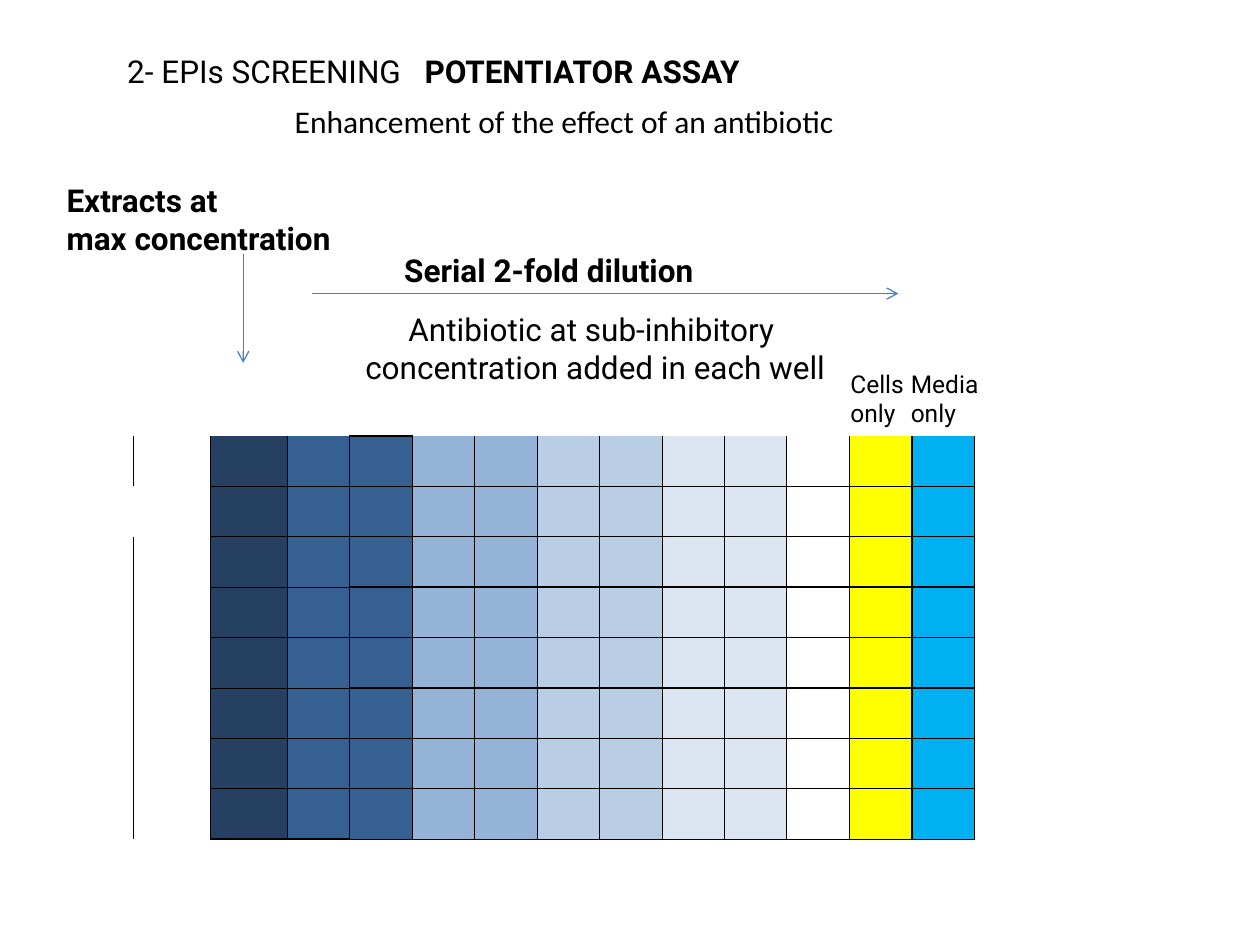
from lxml import etree
from pptx import Presentation
from pptx.dml.color import RGBColor
from pptx.enum.shapes import MSO_CONNECTOR
from pptx.enum.text import MSO_ANCHOR, MSO_AUTO_SIZE, PP_ALIGN
from pptx.oxml.ns import qn
from pptx.util import Inches, Pt

STRAIGHT = MSO_CONNECTOR.STRAIGHT
TOP = MSO_ANCHOR.TOP
GROW = MSO_AUTO_SIZE.SHAPE_TO_FIT_TEXT
LEFT, CENTER = PP_ALIGN.LEFT, PP_ALIGN.CENTER
TITLE_ONLY = 5

COLORS = {
    "ink": "000000", "arrow": "4B7EBC", "white": "FFFFFF",
    "strongest": "254061", "strong": "376092", "medium": "95B3D7",
    "light": "B9CDE5", "faint": "DCE6F2",
    "cells": "FFFF00", "media": "00B0F0",
}
WELL_FILLS = [
    None, "strongest", "strong", "strong", "medium", "medium", "light",
    "light", "faint", "faint", "white", "cells", "media", "white",
]
LAST_ROW, LAST_COLUMN = 8, len(WELL_FILLS) - 1
THIN, THICK = 0.5, 1


def well_borders(row, column):
    if row == 0:
        return {}
    if column == 0:
        return {"R": THIN} if row == 2 else {"L": THIN, "R": THIN}
    if column == LAST_COLUMN:
        return {"L": THIN}
    early = column <= 2
    inner, outer = (THIN, THICK) if early else (THICK, THIN)
    borders = {
        "L": THICK if column == 12 else THIN,
        "R": THICK if column == 11 else THIN,
        "B": outer if row == LAST_ROW else inner,
    }
    if row > 1 or column == 3:
        borders["T"] = inner
    return borders


class Slide:
    columns, rows = 100, 75
    font, size = "Roboto", 18

    def __init__(self, deck):
        deck.slide_width, deck.slide_height = Inches(10), Inches(7.5)
        self.column = deck.slide_width / self.columns
        self.row = deck.slide_height / self.rows
        self.slide = deck.slides.add_slide(deck.slide_layouts[TITLE_ONLY])

    def place(self, left, top, width, height):
        return (round(left * self.column), round(top * self.row),
                round(width * self.column), round(height * self.row))

    def color(self, name):
        return RGBColor.from_string(COLORS[name])

    def set_lines(self, box, lines, align=LEFT, size=None, font=None):
        frame = box.text_frame
        frame.word_wrap, frame.auto_size = True, GROW
        frame.vertical_anchor = TOP
        for index, line in enumerate(lines):
            para = frame.add_paragraph() if index else frame.paragraphs[0]
            para.alignment = align
            for text, bold in line:
                span = para.add_run()
                span.text = text
                span.font.name = font or self.font
                span.font.size = Pt(size or self.size)
                span.font.bold = bold
                span.font.color.rgb = self.color("ink")

    def title(self, area, line, tab):
        box = self.slide.shapes.title
        box.left, box.top, box.width, box.height = self.place(*area)
        self.set_lines(box, [line])
        properties = box.text_frame.paragraphs[0]._p.get_or_add_pPr()
        stops = etree.SubElement(properties, qn("a:tabLst"))
        etree.SubElement(stops, qn("a:tab"), pos=str(round(tab * self.column)), algn="l")

    def text(self, area, lines, bold=False, **style):
        box = self.slide.shapes.add_textbox(*self.place(*area))
        self.set_lines(box, [[(line, bold)] for line in lines], **style)

    def arrow(self, start, end):
        ends = self.place(*start, *end)
        line = self.slide.shapes.add_connector(STRAIGHT, *ends)
        line.line.color.rgb = self.color("arrow")
        line.line.width = Pt(0.75)
        etree.SubElement(line.line._get_or_add_ln(), qn("a:tailEnd"), type="arrow")
        etree.SubElement(line._element.spPr, qn("a:effectLst"))

    def border(self, cell, widths):
        properties = cell._tc.get_or_add_tcPr()
        for side in "LRTB":
            edge = etree.SubElement(properties, qn(f"a:ln{side}"))
            if side in widths:
                edge.set("w", str(Pt(widths[side])))
                fill = etree.SubElement(edge, qn("a:solidFill"))
                etree.SubElement(fill, qn("a:srgbClr"), val=COLORS["ink"])
            else:
                edge.set("w", "0")
                etree.SubElement(edge, qn("a:noFill"))

    def plate(self, area, wide, header):
        width, height = area[2:]
        table = self.slide.shapes.add_table(
            LAST_ROW + 1, LAST_COLUMN + 1, *self.place(*area)).table
        table.first_row = table.horz_banding = False
        narrow = (width - 2 * wide) / (LAST_COLUMN - 1)
        for index, column in enumerate(table.columns):
            column.width = round((wide if index < 2 else narrow) * self.column)
        for index, row in enumerate(table.rows):
            share = (height - header) / LAST_ROW if index else header
            row.height = round(share * self.row)
            for number, cell in enumerate(row.cells):
                cell.margin_left = cell.margin_right = 0
                cell.margin_top = cell.margin_bottom = 0
                self.border(cell, well_borders(index, number))
                name = WELL_FILLS[number] if index else None
                if name:
                    cell.fill.solid()
                    cell.fill.fore_color.rgb = self.color(name)
                else:
                    cell.fill.background()
        table.cell(0, 2).merge(table.cell(0, 3))


def main():
    deck = Presentation()
    slide = Slide(deck)
    slide.title((9.1, 3.6, 74.8, 7.1),
                [("2- EPIs SCREENING\t", False), ("POTENTIATOR ASSAY", True)], tab=23.6)
    slide.plate((10.6, 31.2, 71.7, 35.4), wide=6.1, header=3.4)
    slide.text((4.3, 13.9, 56.7, 7.1), ["Extracts at", "max concentration"], bold=True)
    slide.arrow((19.3, 20.2), (19.3, 28.8))
    slide.text((31.1, 19.4, 52.8, 4), ["Serial 2-fold dilution"], bold=True)
    slide.arrow((24.8, 23.3), (71.3, 23.3))
    slide.text((66.5, 28.8, 7.9, 5.7), ["Cells only"], size=14)
    slide.text((71.3, 28.8, 10.2, 5.7), ["Media only"], size=14)
    slide.text((20.1, 24.1, 54.3, 7.1),
               ["Antibiotic at sub-inhibitory ", "concentration added in each well"],
               align=CENTER)
    slide.text((22.4, 7.6, 55.1, 4), ["Enhancement of the effect of an antibiotic"],
               font="Calibri")
    deck.save("out.pptx")


if __name__ == "__main__":
    main()
